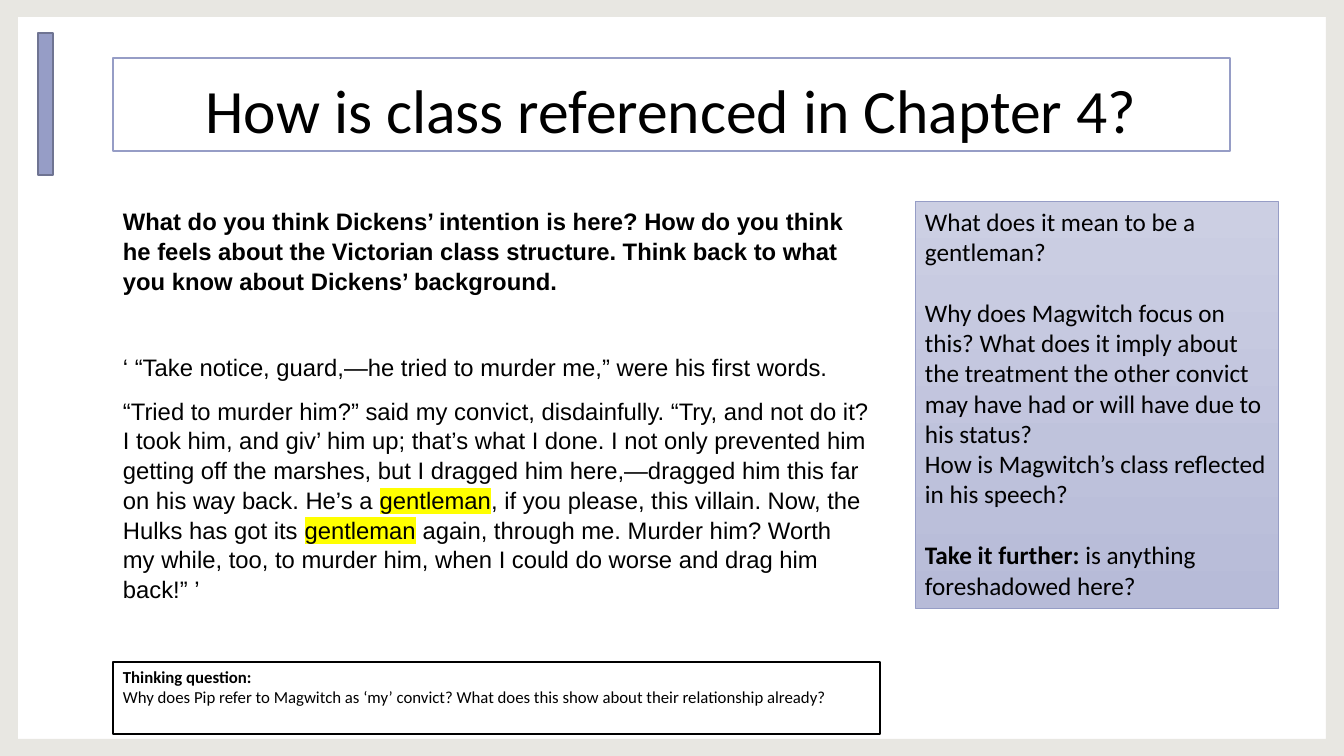
"""Build a slide on how class is referenced in Chapter 4."""
from dataclasses import dataclass

from lxml.etree import SubElement
from pptx import Presentation
from pptx.dml.color import RGBColor
from pptx.enum.shapes import MSO_SHAPE
from pptx.enum.text import MSO_ANCHOR, PP_ALIGN
from pptx.oxml.ns import qn
from pptx.util import Pt

EMU_PER_PX = 914400 / 100.8
COLORS = {
    "white": "FFFFFF",
    "black": "000000",
    "frame": "E8E7E2",
    "accent": "969DC6",
    "accent_dark": "6F7492",
    "grad_top": "CCCFE3",
    "grad_bottom": "B7BBD8",
    "highlight": "FFFF00",
}


@dataclass(frozen=True)
class Run:
    text: str
    bold: bool = False
    highlight: bool = False


@dataclass(frozen=True)
class Para:
    runs: tuple[Run, ...]
    before: float = 0


@dataclass(frozen=True)
class Box:
    left: int
    top: int
    width: int
    height: int
    fill: tuple[str, ...]
    line: str = ""
    line_pt: float = 1
    paras: tuple[Para, ...] = ()
    font: str = "Calibri"
    size: int = 12
    spacing: float = 1.0
    align: PP_ALIGN = PP_ALIGN.LEFT
    anchor: MSO_ANCHOR = MSO_ANCHOR.TOP


GENTLEMAN = Run("gentleman", highlight=True)

ACCENT_BAR = Box(38, 33, 15, 142, ("accent",), "accent_dark")
TITLE = Box(
    113, 58, 1117, 93, ("white",), "accent", 1.5,
    (Para((Run("How is class referenced in Chapter 4?"),)),),
    size=44, spacing=1.1, align=PP_ALIGN.CENTER, anchor=MSO_ANCHOR.BOTTOM,
)
EXTRACT = Box(
    113, 201, 767, 437, ("white",),
    paras=(
        Para((Run("What do you think Dickens’ intention is here? How do you think he feels "
                  "about the Victorian class structure. Think back to what you know about "
                  "Dickens’ background.", bold=True),), 10),
        Para((Run("‘ “Take notice, guard,—he tried to murder me,” were his first words."),), 40.5),
        Para((
            Run("“Tried to murder him?” said my convict, disdainfully. “Try, and not do it? "
                "I took him, and giv’ him up; that’s what I done. I not only prevented him "
                "getting off the marshes, but I dragged him here,—dragged him this far on "
                "his way back. He’s a "),
            GENTLEMAN,
            Run(", if you please, this villain. Now, the Hulks has got its "),
            GENTLEMAN,
            Run(" again, through me. Murder him? Worth my while, too, to murder him, when "
                "I could do worse and drag him back!” ’"),
        ), 10),
    ),
    font="Arial", size=17, spacing=1.04,
)
QUESTIONS = Box(
    915, 201, 363, 407, ("grad_top", "grad_bottom"), "accent", 0.5,
    (
        Para((Run("What does it mean to be a gentleman?"),)),
        Para((Run("Why does Magwitch focus on this? What does it imply about the treatment "
                  "the other convict may have had or will have due to his status?"),), 22),
        Para((Run("How is Magwitch’s class reflected in his speech?"),)),
        Para((Run("Take it further: ", bold=True), Run("is anything foreshadowed here?")), 22),
    ),
    size=18,
)
THINKING = Box(
    113, 662, 767, 72, ("white",), "black", 1,
    (
        Para((Run("Thinking question:", bold=True),)),
        Para((Run("Why does Pip refer to Magwitch as ‘my’ convict? What does this show "
                  "about their relationship already?"),)),
    ),
)


def px(n: int) -> int:
    return round(n * EMU_PER_PX)


def rgb(name: str) -> RGBColor:
    return RGBColor.from_string(COLORS[name])


def corners(left: int, top: int, right: int, bottom: int) -> list[tuple[int, int]]:
    return [(left, top), (left, bottom), (right, bottom), (right, top)]


def draw_frame(slide) -> None:
    inner = corners(18, 17, 1326, 739)
    outer = corners(0, 0, 1344, 756)[::-1]
    builder = slide.shapes.build_freeform(*inner[0], scale=EMU_PER_PX)
    builder.add_line_segments(inner[1:], close=True)
    builder.move_to(*outer[0])
    builder.add_line_segments(outer[1:], close=True)
    sp = builder.convert_to_shape()
    sp.shadow.inherit = False
    sp.fill.solid()
    sp.fill.fore_color.rgb = rgb("frame")
    sp.line.fill.background()


def add_run(p, run: Run, box: Box) -> None:
    r = p.add_run()
    r.text = run.text
    r.font.size = Pt(box.size)
    r.font.bold = run.bold
    r.font.color.rgb = rgb("black")
    if run.highlight:
        mark = SubElement(r.font._element, qn("a:highlight"))
        SubElement(mark, qn("a:srgbClr"), val=COLORS["highlight"])
    r.font.name = box.font


def draw_box(slide, box: Box) -> None:
    sp = slide.shapes.add_shape(
        MSO_SHAPE.RECTANGLE, px(box.left), px(box.top), px(box.width), px(box.height))
    sp.shadow.inherit = False
    if len(box.fill) > 1:
        sp.fill.gradient()
        sp.fill.gradient_angle = 270
        for stop, name in zip(sp.fill.gradient_stops, box.fill):
            stop.color.rgb = rgb(name)
    else:
        sp.fill.solid()
        sp.fill.fore_color.rgb = rgb(box.fill[0])
    if box.line:
        sp.line.color.rgb = rgb(box.line)
        sp.line.width = Pt(box.line_pt)
    else:
        sp.line.fill.background()
    tf = sp.text_frame
    tf.word_wrap = True
    tf.vertical_anchor = box.anchor
    for i, para in enumerate(box.paras):
        p = tf.add_paragraph() if i else tf.paragraphs[0]
        p.alignment = box.align
        p.line_spacing = box.spacing
        p.space_before = Pt(para.before)
        for run in para.runs:
            add_run(p, run, box)


def main() -> None:
    prs = Presentation()
    prs.slide_width, prs.slide_height = px(1344), px(756)
    slide = prs.slides.add_slide(prs.slide_layouts[6])
    draw_frame(slide)
    for box in (ACCENT_BAR, TITLE, EXTRACT, QUESTIONS, THINKING):
        draw_box(slide, box)
    prs.save("out.pptx")


if __name__ == "__main__":
    main()
